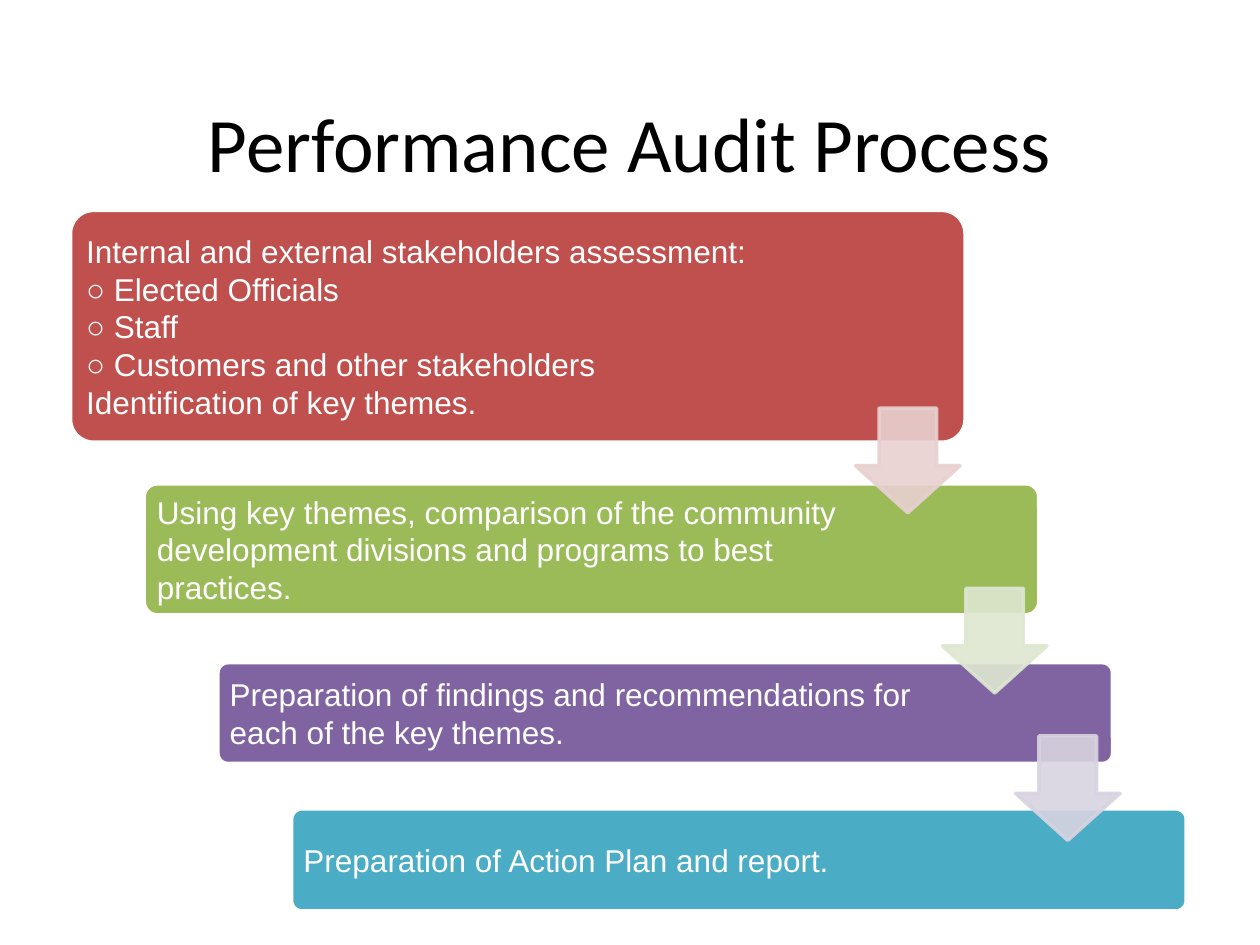
from lxml.etree import SubElement
from pptx import Presentation
from pptx.dml.color import RGBColor
from pptx.enum.shapes import MSO_SHAPE
from pptx.enum.text import MSO_ANCHOR, PP_ALIGN
from pptx.oxml.ns import qn
from pptx.util import Inches, Pt

COLORS = {
    "black": "000000",
    "white": "FFFFFF",
    "red": "C0504D",
    "green": "9BBB59",
    "purple": "8064A2",
    "teal": "4BACC6",
    "pale red": "E8D0D0",
    "pale green": "DEE7D1",
    "pale purple": "D8D3E0",
}

# Top, height, text width, colour and lines of each step
STEPS = [
    (1.67, 1.84, 5.57, "red", [
        "Internal and external stakeholders assessment:",
        "○ Elected Officials",
        "○ Staff",
        "○ Customers and other stakeholders",
        "Identification of key themes.",
    ]),
    (3.84, 1.04, 5.61, "green", [
        "Using key themes, comparison of the community development "
        "divisions and programs to best practices.",
    ]),
    (5.26, 0.8, 5.63, "purple", [
        "Preparation of findings and recommendations for each of the key themes.",
    ]),
    (6.42, 0.81, 5.62, "teal", ["Preparation of Action Plan and report."]),
]
STEP_LEFT, STEP_INDENT, STEP_WIDTH = 0.56, 0.585, 7.1
CORNER = 0.1
TEXT_INSET = 0.293 * CORNER  # share of the bar height cut off by the round corner

ARROWS = [
    (6.79, 3.24, "pale red"),
    (7.48, 4.67, "pale green"),
    (8.06, 5.84, "pale purple"),
]
ARROW_SIZE = 0.83


def rgb(name):
    return RGBColor.from_string(COLORS[name])


def write_text(frame, lines, font="Arial", size=18, color="white",
               align=PP_ALIGN.LEFT, margin=0.07):
    frame.word_wrap = True
    frame.vertical_anchor = MSO_ANCHOR.MIDDLE
    frame.margin_left = frame.margin_right = Inches(margin)
    frame.margin_top = frame.margin_bottom = Inches(margin)
    for index, line in enumerate(lines):
        paragraph = frame.paragraphs[0] if index == 0 else frame.add_paragraph()
        paragraph.text = line
        paragraph.alignment = align
        paragraph.font.name = font
        paragraph.font.size = Pt(size)
        paragraph.font.color.rgb = rgb(color)


class ProcessSlide:
    """Holds the slide and the style shared by its shapes."""

    line_width = Pt(2)

    def __init__(self, presentation):
        self.slide = presentation.slides.add_slide(presentation.slide_layouts[5])

    def add_title(self, text, left, top, width, height):
        title = self.slide.shapes.title
        title.left, title.top = Inches(left), Inches(top)
        title.width, title.height = Inches(width), Inches(height)
        write_text(title.text_frame, [text], font="Calibri", size=44,
                   color="black", align=PP_ALIGN.CENTER, margin=0.05)

    def add_shape(self, kind, left, top, width, height, fill, line, adjustments):
        shape = self.slide.shapes.add_shape(
            kind, Inches(left), Inches(top), Inches(width), Inches(height))
        shape.shadow.inherit = False
        shape.fill.solid()
        shape.fill.fore_color.rgb = rgb(fill)
        shape.line.color.rgb = rgb(line)
        shape.line.width = self.line_width
        for index, value in enumerate(adjustments):
            shape.adjustments[index] = value
        return shape

    def add_step(self, left, top, height, text_width, color, lines):
        self.add_shape(MSO_SHAPE.ROUNDED_RECTANGLE, left, top, STEP_WIDTH, height,
                       color, "white", [CORNER])
        inset = TEXT_INSET * height
        box = self.slide.shapes.add_textbox(
            Inches(left + inset), Inches(top + inset),
            Inches(text_width), Inches(height - 2 * inset))
        write_text(box.text_frame, lines)

    def add_arrow(self, left, top, color, opacity=90):
        arrow = self.add_shape(MSO_SHAPE.DOWN_ARROW, left, top, ARROW_SIZE, ARROW_SIZE,
                               color, color, [0.55, 0.45])
        for color_element in arrow.element.spPr.iter(qn("a:srgbClr")):
            SubElement(color_element, qn("a:alpha"), val=str(opacity * 1000))


def main():
    presentation = Presentation()
    presentation.slide_width, presentation.slide_height = Inches(10), Inches(7.5)
    process = ProcessSlide(presentation)
    process.add_title("Performance Audit Process", 0.5, 0.75, 9, 0.75)
    for index, step in enumerate(STEPS):
        process.add_step(STEP_LEFT + index * STEP_INDENT, *step)
    for arrow in ARROWS:
        process.add_arrow(*arrow)
    presentation.save("out.pptx")


if __name__ == "__main__":
    main()
